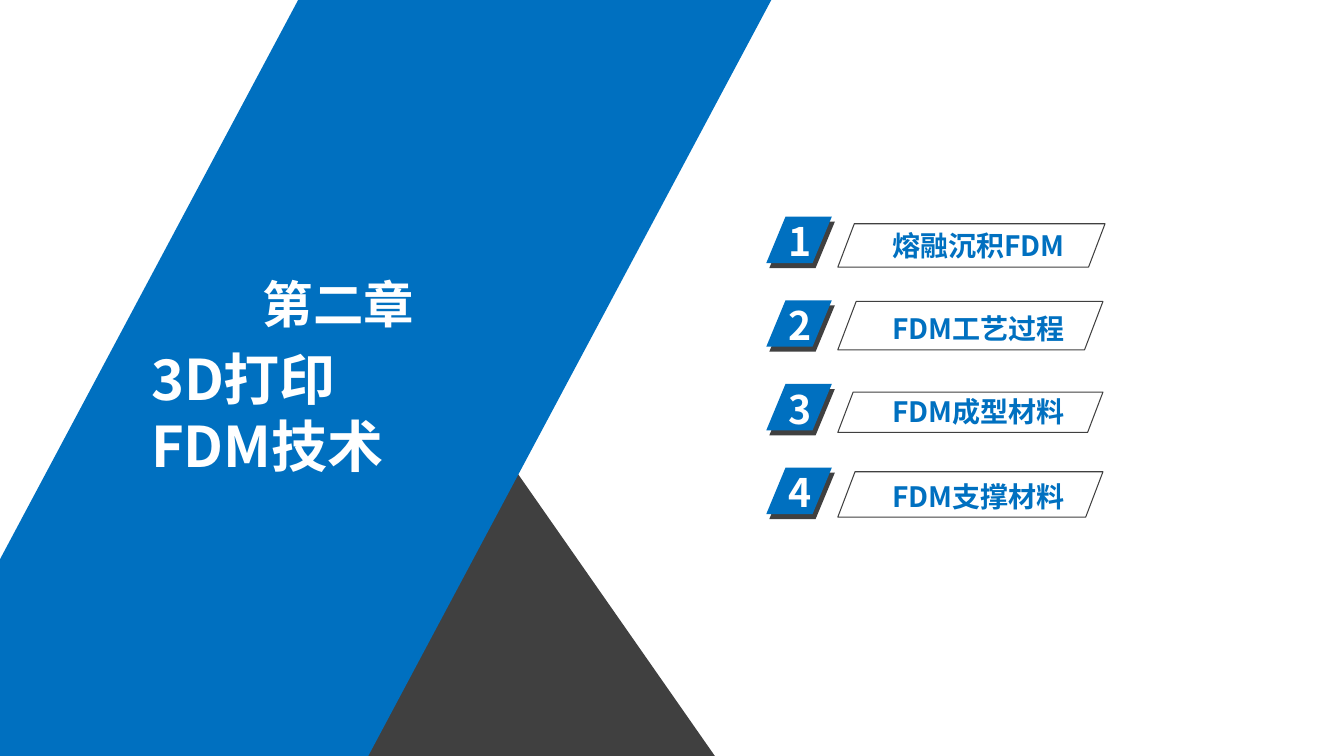
from lxml import etree
from pptx import Presentation
from pptx.dml.color import RGBColor
from pptx.enum import shapes, text
from pptx.oxml import ns
from pptx.util import Inches, Pt

BLUE = RGBColor(0x00, 0x70, 0xC0)
GRAY = RGBColor(0x40, 0x40, 0x40)
WHITE = RGBColor(0xFF, 0xFF, 0xFF)
FONT = "Noto Sans CJK SC"
TOPICS = [
    ("熔融沉积FDM", 2.22, 2.22, 2.65, 0.43),
    ("FDM工艺过程", 3.04, 2.99, 2.63, 0.48),
    ("FDM成型材料", 3.86, 3.89, 2.63, 0.4),
    ("FDM支撑材料", 4.71, 4.68, 2.63, 0.45),
]
FIRST_BADGE_TOP = 2.15
BADGE_STEP = 0.83


def paint(shape, fill=None, line=None):
    shape.shadow.inherit = False
    if fill is None:
        shape.fill.background()
    else:
        shape.fill.solid()
        shape.fill.fore_color.rgb = fill
    if line is None:
        shape.line.fill.background()
    else:
        shape.line.color.rgb = line
        shape.line.width = Pt(0.75)


def add_slanted(parent, left, top, width, height, slant, fill=None, line=None):
    shape = parent.shapes.add_shape(
        shapes.MSO_SHAPE.PARALLELOGRAM,
        Inches(left), Inches(top), Inches(width), Inches(height))
    shape.adjustments[0] = slant
    paint(shape, fill, line)


def add_label(parent, left, top, width, height, words, size, color):
    box = parent.shapes.add_textbox(
        Inches(left), Inches(top), Inches(width), Inches(height))
    frame = box.text_frame
    frame.text = words
    frame.word_wrap = True
    frame.auto_size = text.MSO_AUTO_SIZE.SHAPE_TO_FIT_TEXT
    for para in frame.paragraphs:
        for span in para.runs:
            span.font.size = Pt(size)
            span.font.bold = True
            span.font.name = FONT
            span.font.color.rgb = color
            east_asian = etree.SubElement(span.font._element, ns.qn("a:ea"))
            east_asian.set("typeface", FONT)


def add_triangle(page):
    builder = page.shapes.build_freeform(Inches(3.57), Inches(7.5))
    builder.add_line_segments(
        [(Inches(5.08), Inches(4.62)), (Inches(7.09), Inches(7.5))], close=True)
    paint(builder.convert_to_shape(), GRAY)


def add_badge(page, number, top):
    badge = page.shapes.add_group_shape()
    add_slanted(badge, 7.63, top + 0.05, 0.65, 0.46, 0.415, GRAY)
    add_slanted(badge, 7.6, top, 0.65, 0.46, 0.415, BLUE)
    add_label(badge, 7.72, top - 0.04, 0.69, 0.57, str(number), 28, WHITE)


def add_topic(page, words, label_top, frame_top, width, height):
    add_slanted(page, 8.31, frame_top, width, height, 0.38, line=GRAY)
    add_label(page, 8.75, label_top, 3.03, 0.44, words, 20, BLUE)


def main():
    deck = Presentation()
    deck.slide_width = Inches(13.33)
    deck.slide_height = Inches(7.5)
    page = deck.slides.add_slide(deck.slide_layouts[6])
    add_triangle(page)
    add_slanted(page, -1.04, 0, 8.69, 7.5, 0.533, BLUE)
    add_label(page, 2.51, 2.66, 1.81, 0.71, "第二章", 36, WHITE)
    add_label(page, 1.4, 3.37, 3.77, 1.45, "3D打印\nFDM技术", 40, WHITE)
    for index, topic in enumerate(TOPICS):
        add_badge(page, index + 1, FIRST_BADGE_TOP + index * BADGE_STEP)
        add_topic(page, *topic)
    deck.save("out.pptx")


if __name__ == "__main__":
    main()
